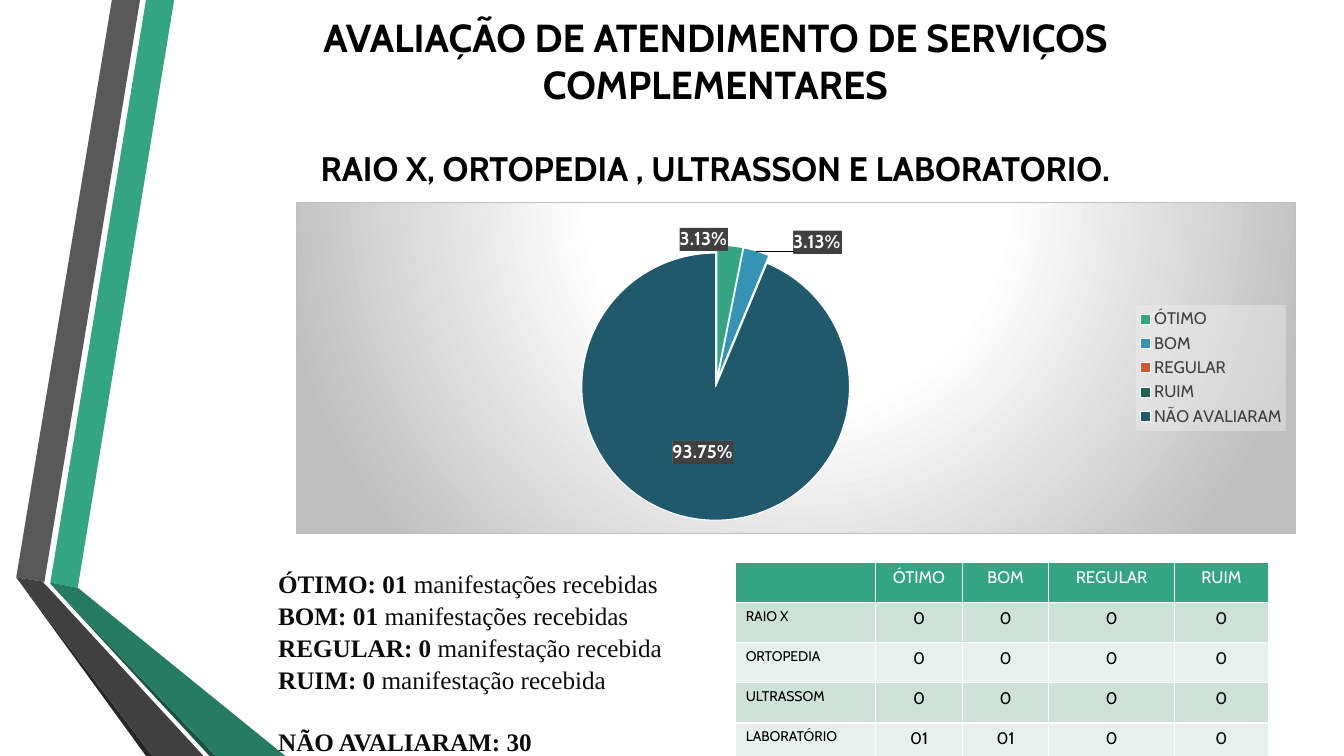
from lxml import etree
from pptx import Presentation
from pptx.chart.data import CategoryChartData
from pptx.dml.color import RGBColor
from pptx.dml.fill import FillFormat
from pptx.dml.line import LineFormat
from pptx.enum.chart import XL_CHART_TYPE, XL_LABEL_POSITION, XL_LEGEND_POSITION
from pptx.enum.dml import MSO_PATTERN
from pptx.enum.text import MSO_ANCHOR, MSO_AUTO_SIZE, PP_ALIGN
from pptx.oxml.ns import qn
from pptx.util import Cm, Pt

PIE = XL_CHART_TYPE.PIE
LABEL_CENTER = XL_LABEL_POSITION.CENTER
LEGEND_RIGHT = XL_LEGEND_POSITION.RIGHT
DARK_VERTICAL = MSO_PATTERN.DARK_VERTICAL
MIDDLE = MSO_ANCHOR.MIDDLE
NO_AUTOFIT = MSO_AUTO_SIZE.NONE
LEFT = PP_ALIGN.LEFT
CENTER = PP_ALIGN.CENTER

GREEN = "33A583"
WHITE = "FFFFFF"
BLACK = "000000"
SILVER = "BFBFBF"


def color(value):
    return RGBColor.from_string(value)


def add_text(paragraph, text, size=12, font="Cabin", fill=BLACK, bold=False, align=LEFT):
    paragraph.alignment = align
    run = paragraph.add_run()
    run.text = text
    run.font.size = Pt(size)
    run.font.name = font
    run.font.bold = bold
    run.font.color.rgb = color(fill)


presentation = Presentation()
presentation.slide_width = Cm(33.87)
presentation.slide_height = Cm(19.05)
slide = presentation.slides.add_slide(presentation.slide_layouts[5])

ribbons = [
    (GREEN, [(1.27, 14.68), (1.96, 14.81), (4.39, 0), (3.68, 0)]),
    ("595959", [(3.53, 0), (2.82, 0), (0.41, 14.55), (1.12, 14.66)]),
    ("262626", [(0.41, 14.55), (3.68, 19.05), (3.84, 19.05)]),
    ("1A5242", [(1.27, 14.71), (5.28, 19.05), (5.44, 19.05)]),
    ("267C62", [(1.27, 14.71), (5.44, 19.05), (7.19, 19.05), (1.96, 14.81), (1.27, 14.68)]),
    ("404040", [(5.13, 19.05), (1.22, 14.81), (1.09, 14.68), (1.12, 14.66), (0.41, 14.55), (3.84, 19.05)]),
]
for fill, corners in ribbons:
    points = [(Cm(x), Cm(y)) for x, y in corners]
    builder = slide.shapes.build_freeform(*points[0])
    builder.add_line_segments(points[1:])
    ribbon = builder.convert_to_shape()
    ribbon.shadow.inherit = False
    ribbon.fill.solid()
    ribbon.fill.fore_color.rgb = color(fill)
    ribbon.line.fill.background()

title = slide.shapes.title
title.left, title.top, title.width, title.height = Cm(4.11), Cm(0), Cm(27.84), Cm(5.08)
title_frame = title.text_frame
title_frame.word_wrap = True
title_frame.auto_size = NO_AUTOFIT
title_frame.vertical_anchor = MIDDLE
add_text(title_frame.paragraphs[0], "AVALIAÇÃO DE ATENDIMENTO DE SERVIÇOS COMPLEMENTARES",
         size=27.9, bold=True, align=CENTER)
subtitle = title_frame.add_paragraph()
subtitle.space_before = Pt(29)
add_text(subtitle, "RAIO X, ORTOPEDIA , ULTRASSON E LABORATORIO.", size=24.3, bold=True, align=CENTER)

chart_data = CategoryChartData(number_format='0.00"%"')
chart_data.categories = ["ÓTIMO", "BOM", "REGULAR", "RUIM", "NÃO AVALIARAM"]
chart_data.add_series("Series 1", [3.13, 3.13, 0, 0, 93.75])
chart = slide.shapes.add_chart(PIE, Cm(7.47), Cm(5.08), Cm(25.2), Cm(8.38), chart_data).chart
chart.has_title = False
chart.font.name = "Cabin"
chart.font.size = Pt(10)
chart.font.color.rgb = color(BLACK)
chart.has_legend = True
legend = chart.legend
legend.position = LEGEND_RIGHT
legend.include_in_layout = False
legend.font.name = "Cabin"
legend.font.size = Pt(12)
legend.font.color.rgb = color("404040")

plot = chart.plots[0]
plot.vary_by_categories = True
series = plot.series[0]
for index, fill in enumerate([GREEN, "3594B4", "D35731", "1F634F", "20596C"]):
    slice_format = series.points[index].format
    slice_format.fill.solid()
    slice_format.fill.fore_color.rgb = color(fill)
    slice_format.line.color.rgb = color(WHITE)
    slice_format.line.width = Pt(0.75)
explosion = etree.SubElement(series._element, qn("c:explosion"), val="3")
series._element.find(qn("c:dPt")).addprevious(explosion)

series.data_labels.show_value = False
for index in (0, 1, 4):
    data_label = series.points[index].data_label
    data_label.position = LABEL_CENTER
    data_label.font.name = "Cabin"
    data_label.font.size = Pt(13.3)
    data_label.font.bold = True
    data_label.font.color.rgb = color(WHITE)
labels = list(series._element.iter(qn("c:dLbl")))
for label in labels:
    properties = etree.SubElement(label, qn("c:spPr"))
    label.find(qn("c:txPr")).addprevious(properties)
    label_fill = FillFormat.from_fill_parent(properties)
    label_fill.patterned()
    label_fill.pattern = DARK_VERTICAL
    label_fill.fore_color.rgb = color("404040")
    label_fill.back_color.rgb = color("595959")

plot_area = chart._chartSpace.chart.plotArea
layouts = [
    (plot_area, 0, {"layoutTarget": "inner", "xMode": "edge", "yMode": "edge",
                    "x": 0.28, "y": 0.13, "w": 0.28, "h": 0.83}),
    (legend._element, 1, {"xMode": "edge", "yMode": "edge", "x": 0.84, "y": 0.31, "w": 0.15, "h": 0.38}),
    (labels[0], 1, {"x": -0.02, "y": -0.22}),
    (labels[1], 1, {"x": 0.08, "y": -0.22}),
]
for parent, position, settings in layouts:
    for old_layout in parent.findall(qn("c:layout")):
        parent.remove(old_layout)
    layout = etree.SubElement(parent, qn("c:layout"))
    parent.insert(position, layout)
    manual_layout = etree.SubElement(layout, qn("c:manualLayout"))
    for name, value in settings.items():
        etree.SubElement(manual_layout, qn(f"c:{name}"), val=str(value))

legend_properties = etree.SubElement(legend._element, qn("c:spPr"))
legend._element.find(qn("c:txPr")).addprevious(legend_properties)
legend_fill = FillFormat.from_fill_parent(legend_properties)
legend_fill.solid()
legend_fill.fore_color.rgb = color("F2F2F2")
etree.SubElement(next(legend_properties.iter(qn("a:srgbClr"))), qn("a:alpha"), val="39000")

chart_properties = etree.SubElement(chart._chartSpace, qn("c:spPr"))
chart._chartSpace.chart.addnext(chart_properties)
background = FillFormat.from_fill_parent(chart_properties)
background.gradient()
for stop, position, fill in zip(background.gradient_stops, (0.39, 1), (WHITE, SILVER)):
    stop.position = position
    stop.color.rgb = color(fill)
gradient = chart_properties.find(qn("a:gradFill"))
gradient.remove(gradient.find(qn("a:lin")))
circle = etree.SubElement(gradient, qn("a:path"), path="circle")
etree.SubElement(circle, qn("a:fillToRect"), l="50000", t="-80000", r="50000", b="180000")
border = LineFormat(chart_properties)
border.color.rgb = color(SILVER)
border.width = Pt(0.75)

summary = slide.shapes.add_textbox(Cm(6.76), Cm(14.17), Cm(12.07), Cm(4.88)).text_frame
summary.word_wrap = True
ratings = [
    ("ÓTIMO: 01 ", "manifestações recebidas"),
    ("BOM: 01 ", "manifestações recebidas"),
    ("REGULAR: 0 ", "manifestação recebida"),
    ("RUIM: 0 ", "manifestação recebida"),
    ("NÃO AVALIARAM: 30", ""),
]
for index, (rating, detail) in enumerate(ratings):
    paragraph = summary.add_paragraph() if index else summary.paragraphs[0]
    paragraph.line_spacing = 1.05
    add_text(paragraph, rating, size=18, font="Times New Roman", fill="0D0D0D", bold=True)
    if detail:
        add_text(paragraph, detail, size=18, font="Times New Roman", fill="0D0D0D")
    else:
        paragraph.space_before = Pt(21.7)

rows = [["", "ÓTIMO", "BOM", "REGULAR", "RUIM"], ["RAIO X", "0", "0", "0", "0"], ["ORTOPEDIA", "0", "0", "0", "0"],
        ["ULTRASSOM", "0", "0", "0", "0"], ["LABORATÓRIO", "01", "01", "0", "0"]]
table = slide.shapes.add_table(5, 5, Cm(18.54), Cm(14.17), Cm(13.42), Cm(4.88)).table
for column, width in zip(table.columns, [3.53, 2.18, 2.18, 3.17, 2.36]):
    column.width = Cm(width)
for row_index, values in enumerate(rows):
    table.rows[row_index].height = Cm(1.01 if row_index else 0.84)
    row_fill = ("E8F0ED", "CEE1D9")[row_index % 2] if row_index else GREEN
    for column_index, value in enumerate(values):
        cell = table.cell(row_index, column_index)
        cell.fill.solid()
        cell.fill.fore_color.rgb = color(row_fill)
        if value:
            add_text(cell.text_frame.paragraphs[0], value, size=12 if column_index else 10,
                     fill=BLACK if row_index else WHITE, align=CENTER if column_index else LEFT)

presentation.save("out.pptx")
